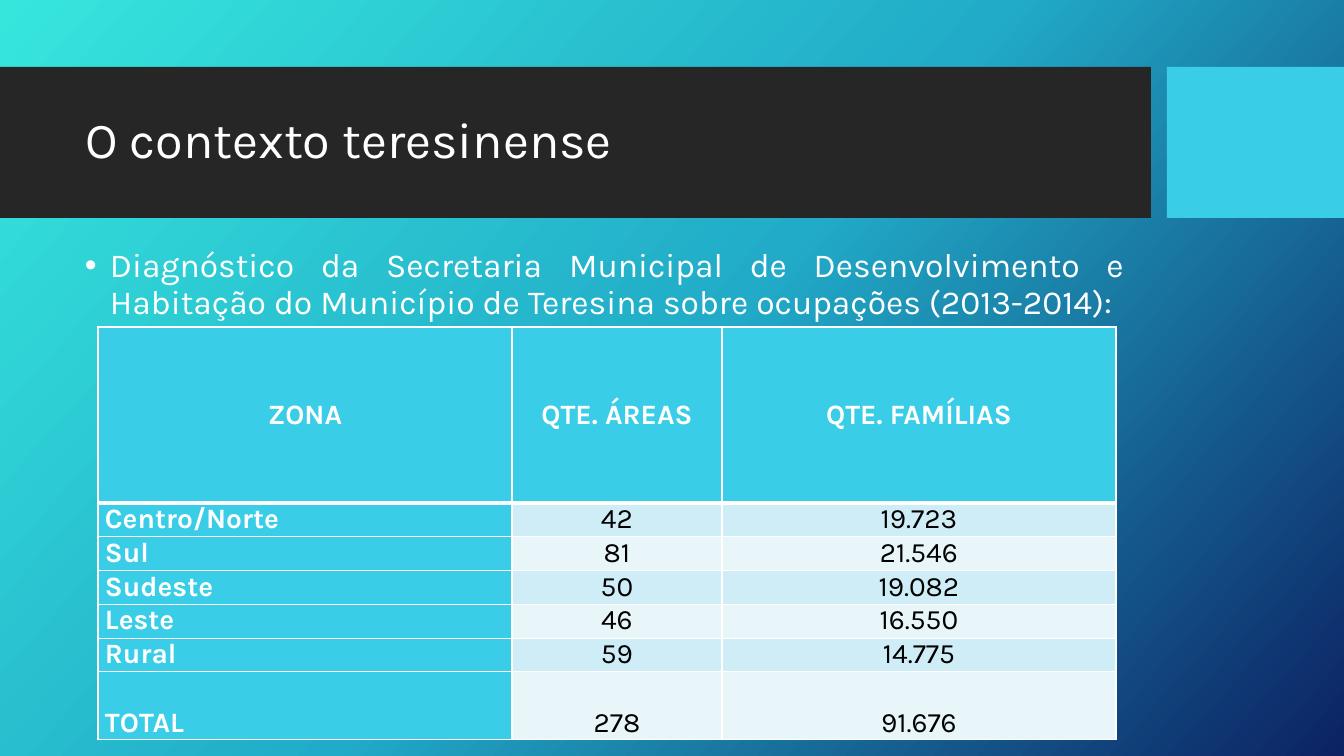
from dataclasses import dataclass

from pptx import Presentation
from pptx import util as u
from pptx.dml.color import RGBColor
from pptx.enum import shapes, text
from pptx.oxml import parse_xml
from pptx.oxml.ns import nsdecls, qn

EMU_PER_PX = 914400 / 100.8


def px(length):
    return u.Emu(round(length * EMU_PER_PX))


@dataclass(frozen=True)
class Theme:
    font: str = "Karla"
    white: str = "FFFFFF"
    black: str = "000000"
    band: str = "262626"
    accent: str = "39CDE7"
    stripes: tuple = ("CEEDF6", "E8F6FA")
    gradient: tuple = ((0, "36E6DD"), (50, "21ABC8"), (100, "0C2263"))
    title_size: int = 36
    body_size: int = 24
    table_size: int = 20
    thin: int = 1
    thick: int = 3


class SlideBuilder:
    def __init__(self, slide, theme):
        self.slide = slide
        self.theme = theme

    def background(self, angle):
        fill = self.slide.background.fill
        fill.gradient()
        fill.gradient_angle = 360 - angle
        stops = next(self.slide.element.iter(qn("a:gsLst")))
        for stop in list(stops):
            stops.remove(stop)
        for position, color in self.theme.gradient:
            stops.append(parse_xml(
                f'<a:gs {nsdecls("a")} pos="{position * 1000}">'
                f'<a:srgbClr val="{color}"/></a:gs>'))

    def panel(self, left, top, width, height, color):
        """Add a plain rectangle behind the placeholders."""
        shape = self.slide.shapes.add_shape(
            shapes.MSO_SHAPE.RECTANGLE, px(left), px(top), px(width), px(height))
        shape.shadow.inherit = False
        shape.fill.solid()
        shape.fill.fore_color.rgb = RGBColor.from_string(color)
        shape.line.fill.background()
        self.slide.shapes.element.insert(2, shape.element)

    def add_text(self, paragraph, words, size, color, align, bold=False):
        paragraph.alignment = align
        run = paragraph.add_run()
        run.text = words
        run.font.name = self.theme.font
        run.font.size = u.Pt(size)
        run.font.bold = bold
        run.font.color.rgb = RGBColor.from_string(color)

    def title(self, left, top, width, height, words):
        shape = self.slide.shapes.title
        shape.left, shape.top = px(left), px(top)
        shape.width, shape.height = px(width), px(height)
        frame = shape.text_frame
        frame.auto_size = text.MSO_AUTO_SIZE.NONE
        frame.vertical_anchor = text.MSO_ANCHOR.MIDDLE
        paragraph = frame.paragraphs[0]
        paragraph.line_spacing = 0.9
        self.add_text(paragraph, words, self.theme.title_size, self.theme.white,
                      text.PP_ALIGN.LEFT)

    def bullet(self, left, top, width, height, words, indent):
        box = self.slide.shapes.add_textbox(px(left), px(top), px(width), px(height))
        box.text_frame.word_wrap = True
        paragraph = box.text_frame.paragraphs[0]
        properties = paragraph._p.get_or_add_pPr()
        properties.set("marL", str(px(indent)))
        properties.set("indent", str(-px(indent)))
        properties.append(parse_xml(
            f'<a:buFont {nsdecls("a")} typeface="Arial"/>'))
        properties.append(parse_xml(f'<a:buChar {nsdecls("a")} char="•"/>'))
        paragraph.line_spacing = 0.9
        self.add_text(paragraph, words, self.theme.body_size, self.theme.white,
                      text.PP_ALIGN.JUSTIFY)

    def borders(self, cell, top, bottom):
        thin = self.theme.thin
        edges = (("lnL", thin), ("lnR", thin), ("lnT", top), ("lnB", bottom))
        properties = cell._tc.get_or_add_tcPr()
        for index, (edge, weight) in enumerate(edges):
            properties.insert(index, parse_xml(
                f'<a:{edge} {nsdecls("a")} w="{u.Pt(weight)}"><a:solidFill>'
                f'<a:srgbClr val="{self.theme.white}"/></a:solidFill></a:{edge}>'))

    def cell(self, cell, words, row, column, last_row):
        theme = self.theme
        heading = row == 0 or column == 0
        fill = theme.accent if heading else theme.stripes[(row - 1) % 2]
        cell.fill.solid()
        cell.fill.fore_color.rgb = RGBColor.from_string(fill)
        self.borders(cell, theme.thick if row == 1 else theme.thin,
                     theme.thick if row == 0 else theme.thin)
        cell.margin_left = cell.margin_right = px(7)
        cell.margin_top = cell.margin_bottom = 0
        anchors = {0: text.MSO_ANCHOR.MIDDLE, last_row: text.MSO_ANCHOR.BOTTOM}
        cell.vertical_anchor = anchors.get(row, text.MSO_ANCHOR.TOP)
        centred = row == 0 or column > 0
        self.add_text(cell.text_frame.paragraphs[0], words, theme.table_size,
                      theme.white if heading else theme.black,
                      text.PP_ALIGN.CENTER if centred else text.PP_ALIGN.JUSTIFY,
                      heading)

    def table(self, left, top, widths, heights, rows):
        table = self.slide.shapes.add_table(
            len(heights), len(widths), px(left), px(top),
            px(sum(widths)), px(sum(heights))).table
        table.first_row = table.horz_banding = False
        for column, width in zip(table.columns, widths):
            column.width = px(width)
        for row, height in zip(table.rows, heights):
            row.height = px(height)
        for row, values in enumerate(rows):
            for column, words in enumerate(values):
                self.cell(table.cell(row, column), words, row, column, len(rows) - 1)


def main():
    theme = Theme()
    presentation = Presentation()
    presentation.slide_width, presentation.slide_height = px(1344), px(756)
    slide = presentation.slides.add_slide(presentation.slide_layouts[5])
    builder = SlideBuilder(slide, theme)

    builder.background(42)
    builder.panel(0, 67, 1151, 151, theme.band)
    builder.panel(1167, 67, 177, 151, theme.accent)
    builder.title(75, 83, 1059, 119, "O contexto teresinense")
    builder.bullet(
        75, 244, 1059, 397,
        "Diagnóstico da Secretaria Municipal de Desenvolvimento e Habitação "
        "do Município de Teresina sobre ocupações (2013-2014):", 25)
    builder.table(
        98, 327, (414, 210, 394), (176, 33, 34, 33, 34, 33, 68),
        (("ZONA", "QTE. ÁREAS", "QTE. FAMÍLIAS"),
         ("Centro/Norte", "42", "19.723"),
         ("Sul", "81", "21.546"),
         ("Sudeste", "50", "19.082"),
         ("Leste", "46", "16.550"),
         ("Rural", "59", "14.775"),
         ("TOTAL", "278", "91.676")))
    presentation.save("out.pptx")


if __name__ == "__main__":
    main()
